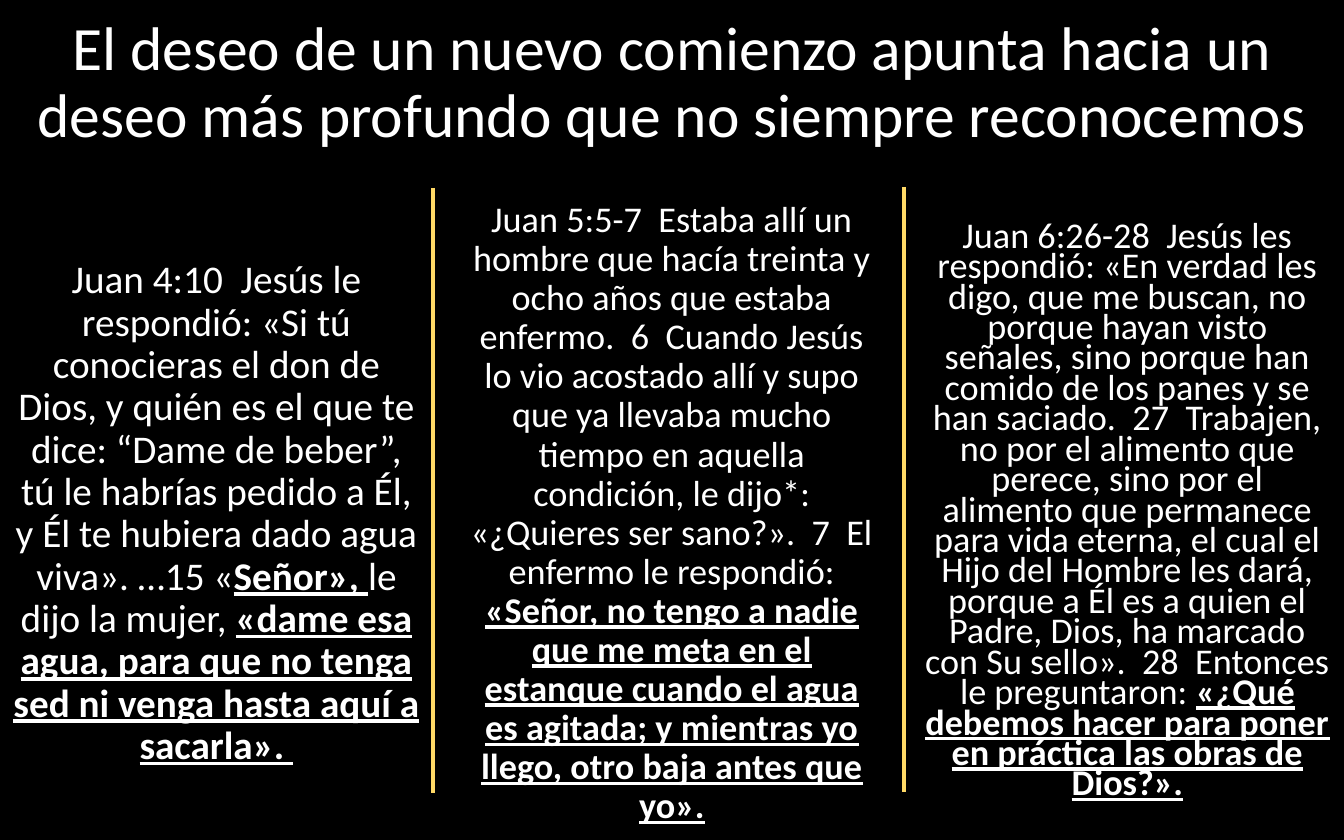
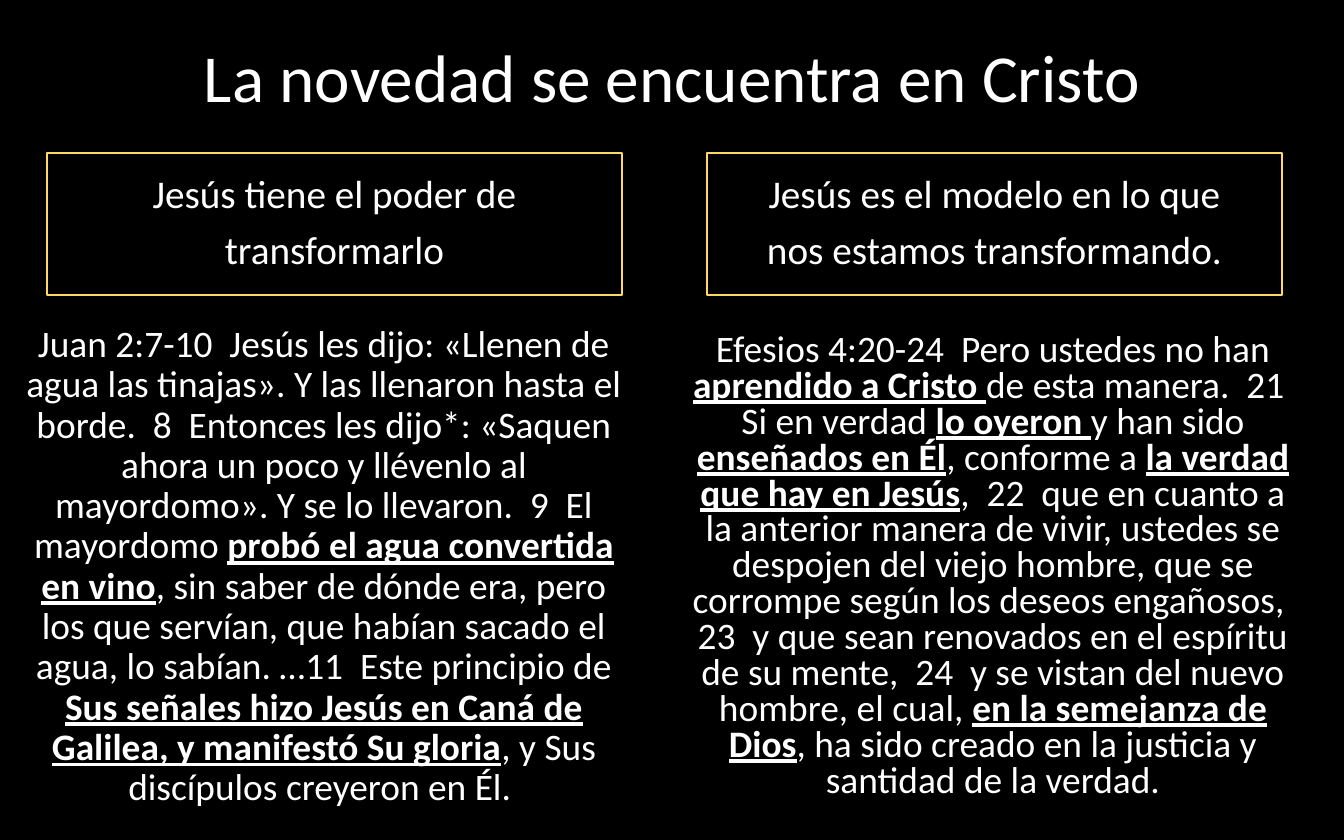
from lxml import etree
from pptx import Presentation
from pptx import util as u
from pptx.dml.color import RGBColor
from pptx.enum import shapes, text
from pptx.oxml.ns import qn

BLACK = RGBColor(0, 0, 0)
WHITE = RGBColor(255, 255, 255)
GOLD = RGBColor(0xFF, 0xD9, 0x66)
FONT = "Calibri"
WIDE, HIGH = 1344, 840
SCALE = 914400 / 134.4

WISH = [
    "El deseo de un nuevo comienzo apunta hacia un",
    "deseo más profundo que no siempre reconocemos",
]
NEW = ["La novedad se encuentra en Cristo"]

# Runs alternate: plain, strong, plain, strong
WELL = [
    "Juan 4:10  Jesús le respondió: «Si tú conocieras el don de Dios, y quién es el que te dice: “Dame de beber”, tú le habrías pedido a Él, y Él te hubiera dado agua viva». …15 «",
    "Señor», ",
    "le dijo la mujer, ",
    "«dame esa agua, para que no tenga sed ni venga hasta aquí a sacarla». ",
]
POOL = [
    "Juan 5:5-7  Estaba allí un hombre que hacía treinta y ocho años que estaba enfermo.  6  Cuando Jesús lo vio acostado allí y supo que ya llevaba mucho tiempo en aquella condición, le dijo*: «¿Quieres ser sano?».  7  El enfermo le respondió: ",
    "«Señor, no tengo a nadie que me meta en el estanque cuando el agua es agitada; y mientras yo llego, otro baja antes que yo».",
]
BREAD = [
    "Juan 6:26-28  Jesús les respondió: «En verdad les digo, que me buscan, no porque hayan visto señales, sino porque han comido de los panes y se han saciado.  27  Trabajen, no por el alimento que perece, sino por el alimento que permanece para vida eterna, el cual el Hijo del Hombre les dará, porque a Él es a quien el Padre, Dios, ha marcado con Su sello».  28  Entonces le preguntaron: ",
    "«¿Qué debemos hacer para poner en práctica las obras de Dios?».",
]
WINE = [
    "Juan 2:7-10  Jesús les dijo: «Llenen de agua las tinajas». Y las llenaron hasta el borde.  8  Entonces les dijo*: «Saquen ahora un poco y llévenlo al mayordomo». Y se lo llevaron.  9  El mayordomo ",
    "probó el agua convertida en vino",
    ", sin saber de dónde era, pero los que servían, que habían sacado el agua, lo sabían. …11  Este principio de ",
    "Sus señales hizo Jesús en Caná de Galilea, y manifestó Su gloria",
    ", y Sus discípulos creyeron en Él. ",
]
SELF = [
    "Efesios 4:20-24  Pero ustedes no han ",
    "aprendido a Cristo ",
    "de esta manera.  21  Si en verdad ",
    "lo oyeron ",
    "y han sido ",
    "enseñados en Él",
    ", conforme a ",
    "la verdad que hay en Jesús",
    ",  22  que en cuanto a la anterior manera de vivir, ustedes se despojen del viejo hombre, que se corrompe según los deseos engañosos,  23  y que sean renovados en el espíritu de su mente,  24  y se vistan del nuevo hombre, el cual, ",
    "en la semejanza de Dios",
    ", ha sido creado en la justicia y santidad de la verdad.",
]
COLUMNS = [(WELL, 21, 0.9), (POOL, 19.4, 0.9), (BREAD, 19.4, 0.7)]
HALVES = [
    (["Jesús tiene el poder de", "transformarlo"], WINE, 0.9),
    (["Jesús es el modelo en lo que", "nos estamos transformando."], SELF, 0.8),
]


def px(n):
    return u.Emu(round(n * SCALE))


def place(shape, box):
    shape.left, shape.top, shape.width, shape.height = map(px, box)


def frame(shape, inset=7):
    tf = shape.text_frame
    tf.word_wrap = True
    tf.auto_size = text.MSO_AUTO_SIZE.NONE
    tf.vertical_anchor = text.MSO_ANCHOR.MIDDLE
    tf.margin_left = tf.margin_right = px(13)
    tf.margin_top = tf.margin_bottom = px(inset)
    return tf


def style(para, space=0.9, before=7.5):
    para.alignment = text.PP_ALIGN.CENTER
    para.line_spacing = space
    para.space_before = u.Pt(before)
    para.space_after = u.Pt(0)


def write(para, words, size, strong=False):
    run = para.add_run()
    run.text = words
    font = run.font
    font.name, font.size = FONT, u.Pt(size)
    font.color.rgb = WHITE
    font.bold = font.underline = strong


def head(slide, lines, box, size):
    place(slide.shapes.title, box)
    para = frame(slide.shapes.title).paragraphs[0]
    style(para, before=0)
    for i, line in enumerate(lines):
        if i:
            para.add_line_break()
        write(para, line, size)


def verse(shape, runs, size, space, inset=7):
    para = frame(shape, inset).paragraphs[0]
    style(para, space)
    for i, words in enumerate(runs):
        write(para, words, size, i % 2 == 1)


def plain(para):
    props = para._p.get_or_add_pPr()
    props.set("marL", "0")
    props.set("indent", "0")
    etree.SubElement(props, qn("a:buNone"))


def rule(slide, x, top):
    line = slide.shapes.add_connector(
        shapes.MSO_CONNECTOR.STRAIGHT, px(x), px(top), px(x), px(top + 605))
    line.line.color.rgb = GOLD
    line.line.width = u.Pt(2)
    etree.SubElement(line._element.spPr, qn("a:effectLst"))


def label(slide, lines, box):
    rect = slide.shapes.add_shape(shapes.MSO_SHAPE.RECTANGLE, *map(px, box))
    rect.shadow.inherit = False
    rect.fill.background()
    rect.line.color.rgb = GOLD
    rect.line.width = u.Pt(0.75)
    tf = frame(rect, 13)
    for i, line in enumerate(lines):
        para = tf.add_paragraph() if i else tf.paragraphs[0]
        style(para)
        write(para, line, 21)


def desire(deck):
    slide = deck.slides.add_slide(deck.slide_layouts[1])
    head(slide, WISH, (0, 3, WIDE, 162), 33)
    wide = 433
    step = (WIDE - wide) / 2
    for i, (runs, size, space) in enumerate(COLUMNS):
        box = (i * step, 187 if i == 2 else 188, wide, 652)
        if i:
            shape = slide.shapes.add_textbox(*map(px, box))
        else:
            shape = slide.placeholders[1]
            place(shape, box)
        verse(shape, runs, size, space)
    plain(slide.placeholders[1].text_frame.paragraphs[0])
    for x, top in [(433, 188), (904, 187)]:
        rule(slide, x, top)


def christ(deck):
    slide = deck.slides.add_slide(deck.slide_layouts[5])
    head(slide, NEW, (93, 0, WIDE - 2 * 93, 162), 36)
    for i, (lines, runs, space) in enumerate(HALVES):
        shape = slide.shapes.add_textbox(
            *map(px, (3 + i * 669, 294, 642, HIGH - 294)))
        verse(shape, runs, 20, space, 13)
        label(slide, lines, (47 + i * 660, 153, 575, 142))


def main():
    deck = Presentation()
    deck.slide_width, deck.slide_height = px(WIDE), px(HIGH)
    back = deck.slide_master.background.fill
    back.solid()
    back.fore_color.rgb = BLACK
    desire(deck)
    christ(deck)
    deck.save("out.pptx")


if __name__ == "__main__":
    main()
